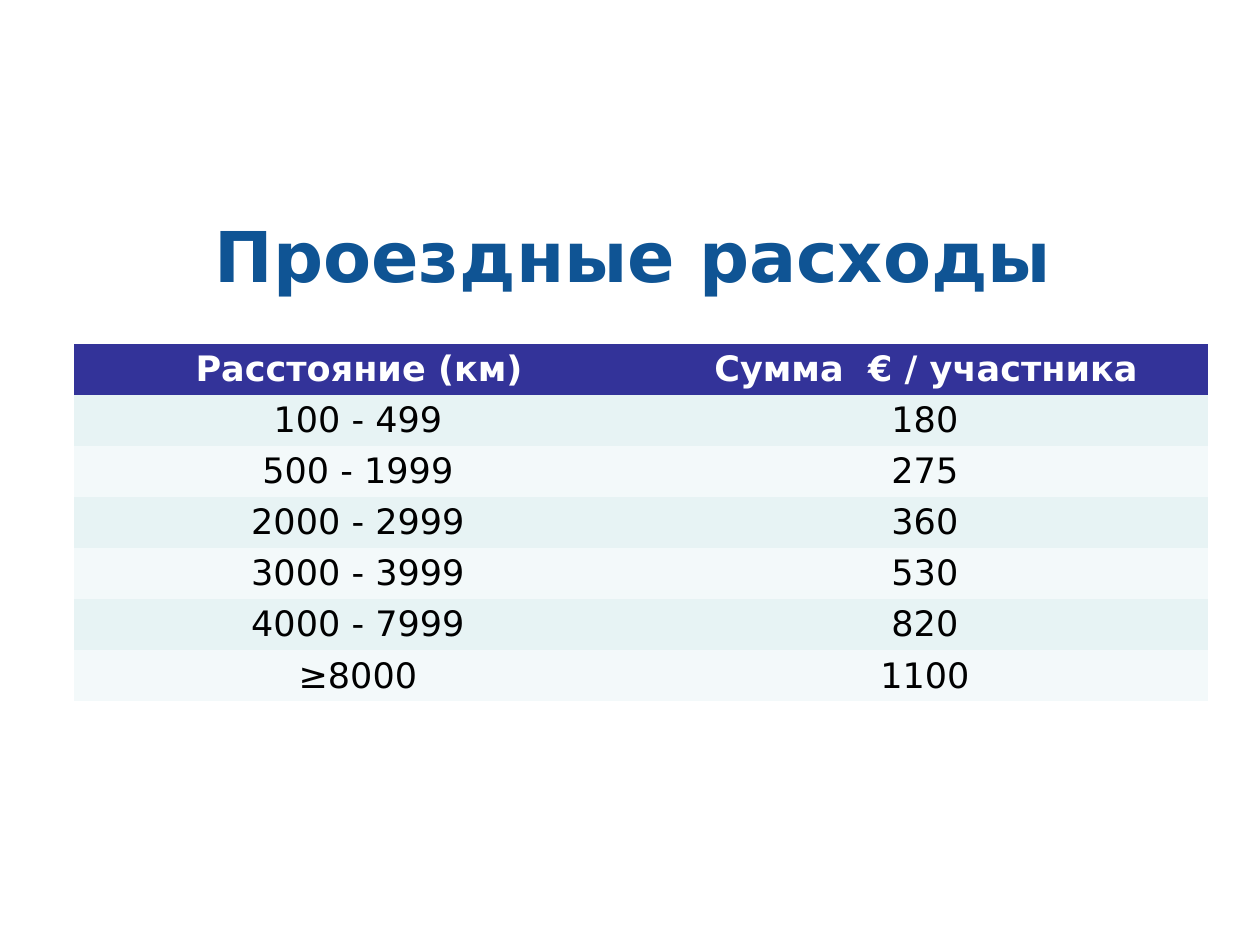
import pptx
import pptx.dml.color
import pptx.enum.text
import pptx.oxml.ns
import pptx.util
from pptx.util import Cm

# Content
TITLE = "Проездные расходы"
ROWS = [
    ("Расстояние (км)", "Сумма  € / участника"),
    ("100 - 499", "180"),
    ("500 - 1999", "275"),
    ("2000 - 2999", "360"),
    ("3000 - 3999", "530"),
    ("4000 - 7999", "820"),
    ("≥8000", "1100"),
]

THEME = {
    "font": "DejaVu Sans",
    "title_size": 40,
    "table_size": 20,
    "title": "0F5494",
    "header_fill": "333399",
    "header_text": "FFFFFF",
    "body_text": "000000",
    "bands": ("E7F3F4", "F3F9FA"),
}
PLAIN_TABLE_STYLE = "{2D5ABB26-0587-4C30-8999-92F81FD0307C}"
ROW_HEIGHT = Cm(1.03)
COLUMN_WIDTH = Cm(11.43)


def color(name):
    return pptx.dml.color.RGBColor.from_string(name)


def write_centered(text_frame, text, size, text_color, bold, indent):
    """Write one centred line, with its left margin moved in by indent."""
    paragraph = text_frame.paragraphs[0]
    paragraph.alignment = pptx.enum.text.PP_ALIGN.CENTER
    properties = paragraph._p.get_or_add_pPr()
    properties.set("marL", str(indent))
    properties.set("indent", "0")
    run = paragraph.add_run()
    run.text = text
    run.font.name = THEME["font"]
    run.font.size = pptx.util.Pt(size)
    run.font.bold = bold
    run.font.color.rgb = color(text_color)


def add_title(slide):
    title = slide.shapes.title
    title.left, title.top, title.width, title.height = Cm(1.09), Cm(3.73), Cm(22.86), Cm(2.59)
    frame = title.text_frame
    frame.word_wrap = True
    frame.vertical_anchor = pptx.enum.text.MSO_ANCHOR.MIDDLE
    frame.margin_top, frame.margin_bottom = Cm(0.3), Cm(0.1)
    write_centered(frame, TITLE, THEME["title_size"], THEME["title"], True, Cm(0.48))


def add_cost_table(slide):
    column_count = len(ROWS[0])
    shape = slide.shapes.add_table(
        len(ROWS), column_count, Cm(1.5), Cm(6.93),
        COLUMN_WIDTH * column_count, ROW_HEIGHT * len(ROWS))
    for style in shape.element.iter(pptx.oxml.ns.qn("a:tableStyleId")):
        style.text = PLAIN_TABLE_STYLE
    table = shape.table

    for row_index, values in enumerate(ROWS):
        header = row_index == 0
        fill = THEME["header_fill"] if header else THEME["bands"][(row_index - 1) % 2]
        text_color = THEME["header_text"] if header else THEME["body_text"]
        for column_index, value in enumerate(values):
            cell = table.cell(row_index, column_index)
            cell.fill.solid()
            cell.fill.fore_color.rgb = color(fill)
            cell.vertical_anchor = pptx.enum.text.MSO_ANCHOR.MIDDLE
            cell.margin_left = cell.margin_right = Cm(0.15)
            cell.margin_top = cell.margin_bottom = 0
            write_centered(cell.text_frame, value, THEME["table_size"], text_color,
                           header, Cm(0.05) if header else 0)


def main():
    presentation = pptx.Presentation()
    presentation.slide_width, presentation.slide_height = Cm(25.4), Cm(19.05)
    slide = presentation.slides.add_slide(presentation.slide_layouts.get_by_name("Title Only"))
    add_title(slide)
    add_cost_table(slide)
    presentation.save("out.pptx")


if __name__ == "__main__":
    main()
